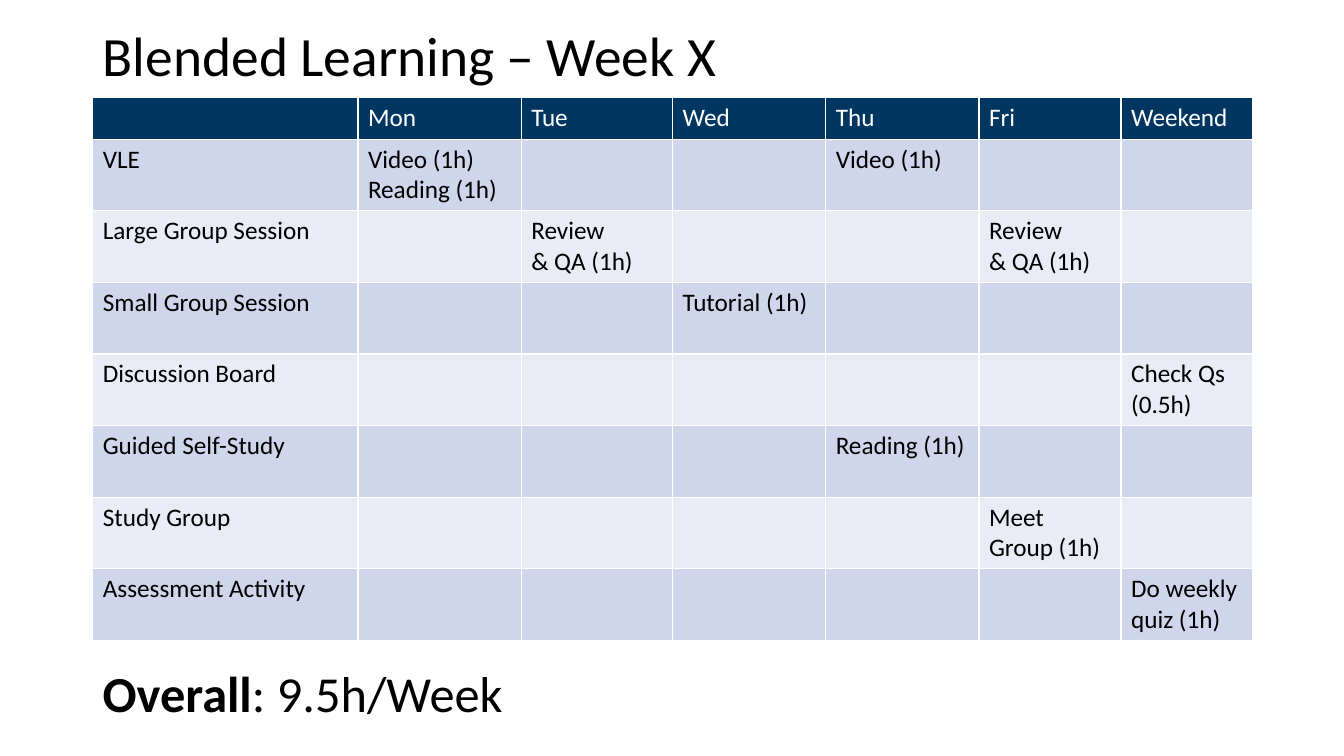
from lxml.etree import SubElement
from pptx import Presentation
from pptx.dml.color import RGBColor
from pptx.enum.text import MSO_ANCHOR as Anchor, MSO_AUTO_SIZE as AutoSize, PP_ALIGN as Align
from pptx.oxml.ns import qn
from pptx.util import Inches, Pt

FONT = "Calibri"
BLACK, WHITE, NAVY = "000000", "FFFFFF", "00365F"
BANDS = ("CFD5EA", "E9EBF5")
LEFT, WIDTH = 0.92, 11.5
COLUMN_WIDTHS = (2.63, 1.62, 1.5, 1.52, 1.52, 1.41, 1.3)
HEADER_HEIGHT, ROW_HEIGHT = 0.41, 0.71
DAYS = ("Mon", "Tue", "Wed", "Thu", "Fri", "Weekend")
ACTIVITIES = {
    "VLE": {"Mon": "Video (1h)\vReading (1h)", "Thu": "Video (1h)"},
    "Large Group Session": {"Tue": "Review \v& QA (1h)", "Fri": "Review \v& QA (1h)"},
    "Small Group Session": {"Wed": "Tutorial (1h)"},
    "Discussion Board": {"Weekend": "Check Qs (0.5h)"},
    "Guided Self-Study": {"Thu": "Reading (1h)"},
    "Study Group": {"Fri": "Meet Group (1h)"},
    "Assessment Activity": {"Weekend": "Do weekly quiz (1h)"},
}


def color(value):
    """Turn a hex string into a colour."""
    return RGBColor.from_string(value)


def style_font(font, size, value, bold=False):
    """Set the typeface, size, colour and weight of a font."""
    font.name, font.size, font.bold = FONT, Pt(size), bold
    font.color.rgb = color(value)


def place(shape, left, top, width, height):
    """Position a shape in inches."""
    shape.left, shape.top = Inches(left), Inches(top)
    shape.width, shape.height = Inches(width), Inches(height)


def add_title(page, text):
    """Fill and format the title placeholder."""
    title = page.shapes.title
    place(title, LEFT, 0.21, WIDTH, 0.75)
    title.text_frame.text = text
    title.text_frame.auto_size = AutoSize.NONE
    title.text_frame.vertical_anchor = Anchor.MIDDLE
    para = title.text_frame.paragraphs[0]
    para.alignment, para.line_spacing = Align.LEFT, 0.9
    style_font(para.font, 39.6, BLACK)


def add_borders(cell, value, width):
    """Draw a solid line on all four sides of a cell."""
    properties = cell._tc.get_or_add_tcPr()
    for side in ("lnL", "lnR", "lnT", "lnB"):
        line = SubElement(properties, qn(f"a:{side}"), w=str(Pt(width)))
        fill = SubElement(line, qn("a:solidFill"))
        SubElement(fill, qn("a:srgbClr"), val=value)


def fill_cell(cell, text, background, ink):
    """Write and format one table cell."""
    add_borders(cell, WHITE, 1)
    cell.fill.solid()
    cell.fill.fore_color.rgb = color(background)
    cell.text_frame.text = text
    for para in cell.text_frame.paragraphs:
        style_font(para.font, 18, ink)


def add_schedule(page):
    """Add the weekly table of activities by day."""
    rows = [("", *DAYS)]
    rows += [(name, *(plan.get(day, "") for day in DAYS)) for name, plan in ACTIVITIES.items()]
    height = HEADER_HEIGHT + ROW_HEIGHT * len(ACTIVITIES)
    table = page.shapes.add_table(len(rows), len(COLUMN_WIDTHS), Inches(LEFT), Inches(0.97),
                                  Inches(WIDTH), Inches(height)).table
    for column, width in zip(table.columns, COLUMN_WIDTHS):
        column.width = Inches(width)
    for index, texts in enumerate(rows):
        header = index == 0
        table.rows[index].height = Inches(HEADER_HEIGHT if header else ROW_HEIGHT)
        background = NAVY if header else BANDS[(index - 1) % 2]
        for cell, text in zip(table.rows[index].cells, texts):
            fill_cell(cell, text, background, WHITE if header else BLACK)


def add_total(page, label, amount):
    """Add the line with the overall hours."""
    box = page.shapes.add_textbox(Inches(LEFT), Inches(6.52), Inches(10.04), Inches(0.71))
    box.text_frame.word_wrap = True
    box.text_frame.auto_size = AutoSize.SHAPE_TO_FIT_TEXT
    para = box.text_frame.paragraphs[0]
    for text, bold in ((label, True), (amount, False)):
        span = para.add_run()
        span.text = text
        style_font(span.font, 36, BLACK, bold)


def main():
    """Build the deck and save it."""
    deck = Presentation()
    deck.slide_width, deck.slide_height = Inches(13.33), Inches(7.5)
    page = deck.slides.add_slide(deck.slide_layouts.get_by_name("Title Only"))
    add_title(page, "Blended Learning – Week X")
    add_schedule(page)
    add_total(page, "Overall", ": 9.5h/Week")
    deck.save("out.pptx")


if __name__ == "__main__":
    main()
